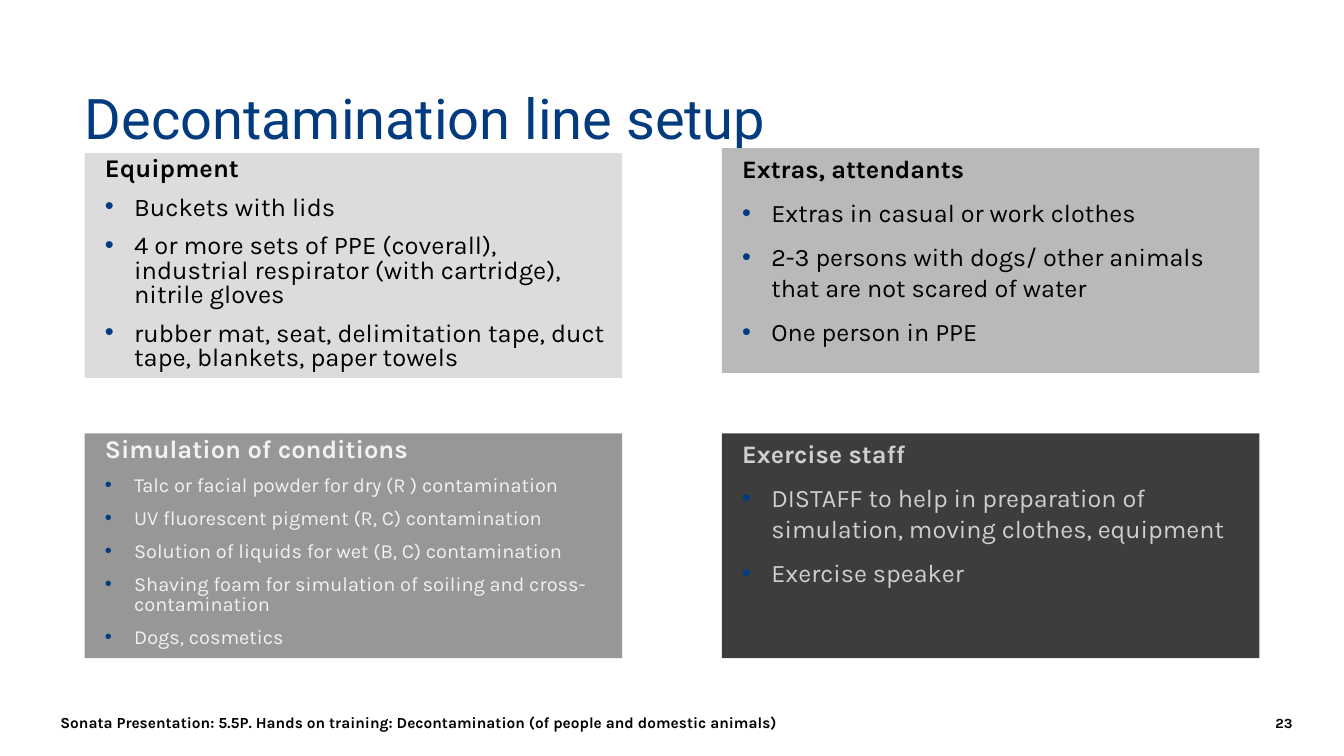
from dataclasses import dataclass

from lxml.etree import SubElement
from pptx import Presentation
from pptx.dml.color import RGBColor
from pptx.enum.text import MSO_ANCHOR, MSO_AUTO_SIZE, PP_ALIGN
from pptx.oxml.ns import qn
from pptx.util import Pt

EMU_PER_PX = 9144


@dataclass(frozen=True)
class Theme:
    heading_font: str = "Roboto"
    body_font: str = "Karla"
    accent: str = "023B7E"
    black: str = "000000"
    light_text: str = "F2F2F2"
    muted_text: str = "D0CECE"
    pale_gray: str = "DCDCDC"
    soft_gray: str = "B9B9B9"
    mid_gray: str = "979797"
    dark_gray: str = "3D3D3D"
    title_size: float = 40
    large_size: float = 18.2
    regular_size: float = 18
    small_size: float = 14.3
    footer_size: float = 11
    number_size: float = 10
    panel_gap: float = 10


@dataclass(frozen=True)
class Panel:
    placeholder: int
    left: int
    top: int
    fill: str
    color: str
    heading_size: float
    item_size: float
    line_spacing: float
    heading: str
    items: tuple


class SlideBuilder:
    def __init__(self, slide, theme):
        self.slide = slide
        self.theme = theme

    def place(self, shape, left, top, width, height):
        shape.left, shape.top, shape.width, shape.height = (
            length * EMU_PER_PX for length in (left, top, width, height)
        )

    def prepare_frame(self, shape, anchor, inset=None):
        frame = shape.text_frame
        frame.word_wrap = True
        frame.auto_size = MSO_AUTO_SIZE.NONE
        frame.vertical_anchor = anchor
        if inset is not None:
            frame.margin_left = frame.margin_right = inset
            frame.margin_top = frame.margin_bottom = inset
        return frame

    def add_run(self, paragraph, text, size, color, bold=False, font=None):
        run = paragraph.add_run()
        run.text = text
        run.font.name = font or self.theme.body_font
        run.font.size = Pt(size)
        run.font.bold = bold
        run.font.color.rgb = RGBColor.from_string(color)

    def set_bullet(self, paragraph, bulleted):
        properties = paragraph._p.get_or_add_pPr()
        indent = -29 if bulleted else 0
        properties.set("marL", str((39 if bulleted else 10) * EMU_PER_PX))
        properties.set("indent", str(indent * EMU_PER_PX))
        if bulleted:
            color = SubElement(properties, qn("a:buClr"))
            SubElement(color, qn("a:srgbClr"), val=self.theme.accent)
            SubElement(properties, qn("a:buFont"), typeface="Arial")
            SubElement(properties, qn("a:buChar"), char="•")
        else:
            SubElement(properties, qn("a:buNone"))

    def add_title(self, text):
        title = self.slide.shapes.title
        self.place(title, 84, 88, 1166, 64)
        paragraph = self.prepare_frame(title, MSO_ANCHOR.MIDDLE, 0).paragraphs[0]
        paragraph.alignment = PP_ALIGN.LEFT
        paragraph.line_spacing = 0.9
        self.add_run(paragraph, text, self.theme.title_size, self.theme.accent,
                     font=self.theme.heading_font)

    def add_panel(self, panel):
        shape = self.slide.placeholders[panel.placeholder]
        self.place(shape, panel.left, panel.top, 533, 223)
        shape.fill.solid()
        shape.fill.fore_color.rgb = RGBColor.from_string(panel.fill)
        frame = self.prepare_frame(shape, MSO_ANCHOR.TOP)
        for position, text in enumerate((panel.heading, *panel.items)):
            is_item = position > 0
            paragraph = frame.add_paragraph() if is_item else frame.paragraphs[0]
            paragraph.alignment = PP_ALIGN.LEFT
            paragraph.line_spacing = panel.line_spacing
            paragraph.space_before = Pt(self.theme.panel_gap)
            paragraph.space_after = Pt(0)
            self.set_bullet(paragraph, is_item)
            size = panel.item_size if is_item else panel.heading_size
            self.add_run(paragraph, text, size, panel.color, bold=not is_item)

    def add_label(self, text, box, size, alignment, anchor, inset=None):
        label = self.slide.shapes.add_textbox(0, 0, 0, 0)
        self.place(label, *box)
        paragraph = self.prepare_frame(label, anchor, inset).paragraphs[0]
        paragraph.alignment = alignment
        self.add_run(paragraph, text, size, self.theme.black, bold=True)


def main():
    theme = Theme()
    left_column, right_column, lower_row = 84, 716, 430
    panels = (
        Panel(1, left_column, 152, theme.pale_gray, theme.black,
              theme.large_size, theme.large_size, 0.8, "Equipment", (
                  "Buckets with lids",
                  "4 or more sets of PPE (coverall), industrial respirator "
                  "(with cartridge), nitrile gloves",
                  "rubber mat, seat, delimitation tape, duct tape, blankets, "
                  "paper towels",
              )),
        Panel(2, right_column, 147, theme.soft_gray, theme.black,
              theme.regular_size, theme.regular_size, 1.0, "Extras, attendants", (
                  "Extras in casual or work clothes",
                  "2-3 persons with dogs/ other animals that are not scared of water",
                  "One person in PPE",
              )),
        Panel(3, left_column, lower_row, theme.mid_gray, theme.light_text,
              theme.large_size, theme.small_size, 0.8, "Simulation of conditions", (
                  "Talc or facial powder for dry (R ) contamination",
                  "UV fluorescent pigment (R, C) contamination",
                  "Solution of liquids for wet (B, C) contamination",
                  "Shaving foam for simulation of soiling and cross-contamination",
                  "Dogs, cosmetics",
              )),
        Panel(4, right_column, lower_row, theme.dark_gray, theme.muted_text,
              theme.regular_size, theme.regular_size, 1.0, "Exercise staff", (
                  "DISTAFF to help in preparation of simulation, moving clothes, "
                  "equipment",
                  "Exercise speaker",
              )),
    )

    presentation = Presentation()
    presentation.slide_width = 1333 * EMU_PER_PX
    presentation.slide_height = 750 * EMU_PER_PX
    comparison_layout = presentation.slide_layouts[4]
    builder = SlideBuilder(presentation.slides.add_slide(comparison_layout), theme)

    builder.add_title("Decontamination line setup")
    for panel in panels:
        builder.add_panel(panel)
    builder.add_label("23", (982, 709, 300, 25), theme.number_size,
                      PP_ALIGN.RIGHT, MSO_ANCHOR.TOP, 0)
    builder.add_label(
        "Sonata Presentation: 5.5P. Hands on training: Decontamination "
        "(of people and domestic animals)",
        (50, 709, 1179, 16), theme.footer_size, PP_ALIGN.LEFT, MSO_ANCHOR.MIDDLE)
    presentation.save("out.pptx")


if __name__ == "__main__":
    main()
